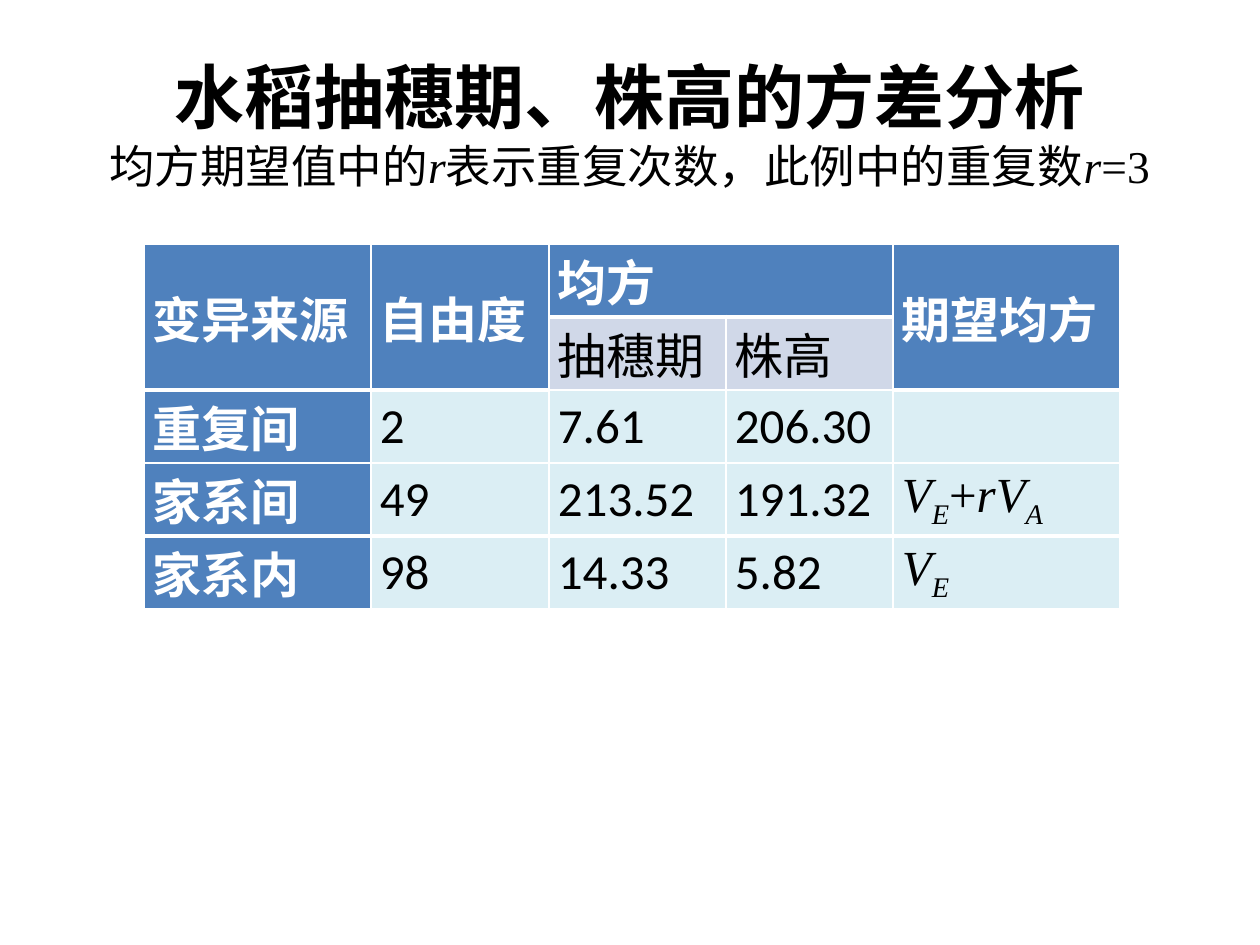
import pptx
import pptx.dml.color
import pptx.enum.text
import pptx.oxml
import pptx.oxml.ns
import pptx.util

RGBColor = pptx.dml.color.RGBColor
Pt = pptx.util.Pt
ALIGN = pptx.enum.text.PP_ALIGN
MIDDLE = pptx.enum.text.MSO_ANCHOR.MIDDLE

BLACK = RGBColor(0x00, 0x00, 0x00)
WHITE = RGBColor(0xFF, 0xFF, 0xFF)
HEADER_BLUE = RGBColor(0x4F, 0x81, 0xBD)
SUBHEADER_GREY = RGBColor(0xD0, 0xD8, 0xE8)
BODY_BLUE = RGBColor(0xDB, 0xEE, 0xF4)

SUBTITLE = [("均方期望值中的", False), ("r", True), ("表示重复次数，此例中的重复数", False),
            ("r", True), ("=3", False)]

# A formula is a list of (text, italic, subscript)
ERROR_VARIANCE = [("V", True, False), ("E", True, True)]
FAMILY_VARIANCE = ERROR_VARIANCE + [("+", False, False), ("rV", True, False), ("A", True, True)]

ANOVA_ROWS = [
    ["变异来源", "自由度", "均方", "", "期望均方"],
    ["", "", "抽穗期", "株高", ""],
    ["重复间", "2", "7.61", "206.30", ""],
    ["家系间", "49", "213.52", "191.32", FAMILY_VARIANCE],
    ["家系内", "98", "14.33", "5.82", ERROR_VARIANCE],
]
MERGES = [((0, 0), (1, 0)), ((0, 1), (1, 1)), ((0, 2), (0, 3)), ((0, 4), (1, 4))]
MEAN_SQUARE_COLUMNS = (2, 3)


def px(length):
    """Turn px at 126 to the inch into EMU."""
    return pptx.util.Emu(round(length * 914400 / 126))


def rule_width(edge, column):
    """Points of the horizontal rule above row number `edge`."""
    header_end = 1 if column in MEAN_SQUARE_COLUMNS else 2
    return 3 if edge in (header_end, 4) else 1


class SlideBuilder:
    text_font = "Calibri"
    formula_font = "Times New Roman"
    table_size = Pt(28)

    def __init__(self, presentation):
        self.slide = presentation.slides.add_slide(presentation.slide_layouts[5])

    def title(self, left, top, width, height, heading, subtitle):
        title = self.slide.shapes.title
        title.left, title.top, title.width, title.height = map(px, (left, top, width, height))
        frame = title.text_frame
        frame.auto_size = pptx.enum.text.MSO_AUTO_SIZE.NONE
        frame.vertical_anchor = MIDDLE
        paragraph = frame.paragraphs[0]
        paragraph.alignment = ALIGN.CENTER
        paragraph.font.name = self.formula_font
        paragraph.font.color.rgb = BLACK
        self.title_run(paragraph, heading, Pt(40), bold=True)
        paragraph.add_line_break()
        for text, italic in subtitle:
            self.title_run(paragraph, text, Pt(26), italic=italic)

    def title_run(self, paragraph, text, size, bold=False, italic=False):
        run = paragraph.add_run()
        run.text = text
        run.font.name = self.formula_font
        run.font.size = size
        run.font.bold = bold
        run.font.italic = italic

    def table(self, left, top, column_widths, row_height, rows, merges):
        frame = self.slide.shapes.add_table(
            len(rows), len(column_widths), px(left), px(top),
            px(sum(column_widths)), px(row_height * len(rows)))
        table = frame.table
        for column, width in zip(table.columns, column_widths):
            column.width = px(width)
        for row in table.rows:
            row.height = px(row_height)
        for first, last in merges:
            table.cell(*first).merge(table.cell(*last))
        for r, row in enumerate(rows):
            for c, content in enumerate(row):
                self.cell(table.cell(r, c), r, c, content)

    def cell(self, cell, row, column, content):
        subheader = row == 1 and column in MEAN_SQUARE_COLUMNS
        header = (row < 2 or column == 0) and not subheader
        bottom_edge = row + (cell.span_height if cell.is_merge_origin else 1)
        self.borders(cell, rule_width(row, column), rule_width(bottom_edge, column))
        cell.fill.solid()
        cell.fill.fore_color.rgb = (
            HEADER_BLUE if header else SUBHEADER_GREY if subheader else BODY_BLUE)
        cell.vertical_anchor = MIDDLE
        cell.margin_left = cell.margin_right = px(9)
        cell.margin_top = cell.margin_bottom = 0

        paragraph = cell.text_frame.paragraphs[0]
        paragraph.alignment = ALIGN.JUSTIFY
        formula = isinstance(content, list)
        font = paragraph.font
        font.name = self.formula_font if formula else self.text_font
        font.size = self.table_size
        font.bold = header
        font.color.rgb = WHITE if header else BLACK
        if formula:
            self.formula(paragraph, content)
        else:
            paragraph.text = content

    def formula(self, paragraph, parts):
        for text, italic, subscript in parts:
            run = paragraph.add_run()
            run.text = text
            run.font.italic = italic
            if subscript:
                run.font._element.set("baseline", "-25000")

    def borders(self, cell, top_width, bottom_width):
        properties = cell._tc.get_or_add_tcPr()
        widths = {"lnL": 1, "lnR": 1, "lnT": top_width, "lnB": bottom_width}
        for side, width in widths.items():
            properties.append(pptx.oxml.parse_xml(
                f'<a:{side} {pptx.oxml.ns.nsdecls("a")} w="{Pt(width)}">'
                f'<a:solidFill><a:srgbClr val="{WHITE}"/></a:solidFill></a:{side}>'))


def main():
    presentation = pptx.Presentation()
    presentation.slide_width = px(1260)
    presentation.slide_height = px(945)
    builder = SlideBuilder(presentation)
    builder.title(74, 45, 1111, 156, "水稻抽穗期、株高的方差分析", SUBTITLE)
    builder.table(144, 244, [227, 178, 177, 167, 227], 73, ANOVA_ROWS, MERGES)
    presentation.save("out.pptx")


if __name__ == "__main__":
    main()
